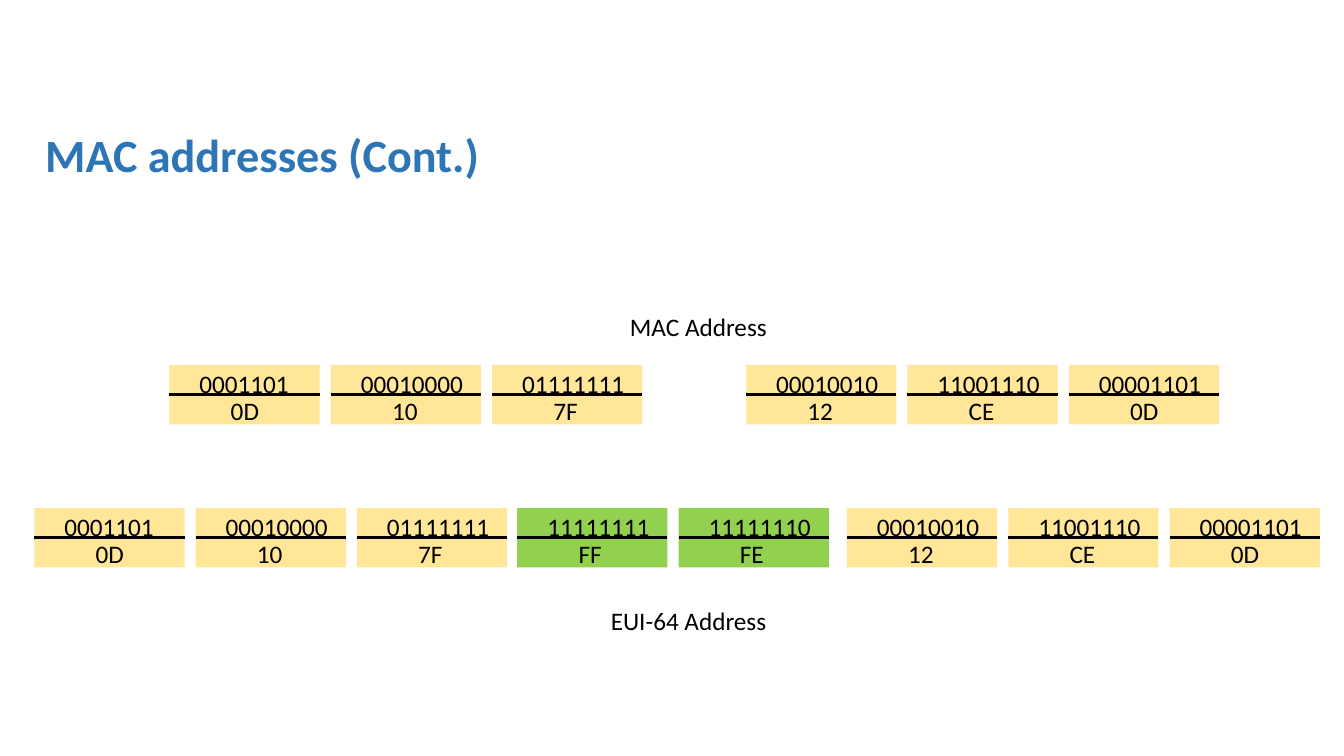
from lxml.etree import SubElement
from pptx import Presentation
from pptx.dml.color import RGBColor
from pptx.enum.shapes import MSO_CONNECTOR, MSO_SHAPE
from pptx.enum.text import MSO_ANCHOR, MSO_AUTO_SIZE
from pptx.oxml.ns import qn
from pptx.util import Pt

PX = 9144  # EMU, 100 px to the inch
THEME = {
    "font": "Calibri",
    "title": RGBColor(0x2E, 0x75, 0xB6),
    "ink": RGBColor(0, 0, 0),
    "mac": RGBColor(0xFF, 0xE6, 0x99),
    "fill": RGBColor(0x92, 0xD0, 0x50),
    "title_size": Pt(33),
    "body_size": Pt(18),
    "rule": Pt(2.25),
}
CELL_W, CELL_H, STEP = 149, 59, 160
HEX_W = {"0D": 49, "FF": 43, "FE": 44}


def add_text(shapes, text, x, y, w, h=40, color="ink", size="body_size"):
    box = shapes.add_textbox(x * PX, y * PX, w * PX, h * PX)
    frame = box.text_frame
    frame.word_wrap = False
    frame.auto_size = MSO_AUTO_SIZE.SHAPE_TO_FIT_TEXT
    run = frame.paragraphs[0].add_run()
    run.text = text
    run.font.name = THEME["font"]
    run.font.size = THEME[size]
    run.font.color.rgb = THEME[color]
    return box


def add_cell(shapes, bits, code, x, y, color):
    """Draw one byte: its bits above a rule, its hex code below."""
    rect = shapes.add_shape(MSO_SHAPE.RECTANGLE, x * PX, y * PX, CELL_W * PX, CELL_H * PX)
    rect.shadow.inherit = False
    rect.fill.solid()
    rect.fill.fore_color.rgb = THEME[color]
    rect.line.fill.background()

    rule = shapes.add_connector(MSO_CONNECTOR.STRAIGHT, 0, 0, 0, 0)
    rule.begin_connect(rect, 1)
    rule.end_connect(rect, 3)
    rule.line.color.rgb = THEME["ink"]
    rule.line.width = THEME["rule"]
    SubElement(rule._element.spPr, qn("a:effectLst"))

    add_text(shapes, bits, x + 20, y - 2, 20 + 13 * len(bits))
    add_text(shapes, code, x + 51, y + 25, HEX_W.get(code, 46))


deck = Presentation()
deck.slide_width, deck.slide_height = 1333 * PX, 750 * PX
slide = deck.slides.add_slide(deck.slide_layouts[6])

title = add_text(slide.shapes, "MAC addresses (Cont.)", 35, 107, 1268, 99, "title", "title_size")
title.text_frame.word_wrap = True
title.text_frame.auto_size = MSO_AUTO_SIZE.NONE
title.text_frame.vertical_anchor = MSO_ANCHOR.MIDDLE
title.text_frame.paragraphs[0].line_spacing = 0.9
title.text_frame.paragraphs[0].runs[0].font.bold = True

maker = [("0001101", "0D"), ("00010000", "10"), ("01111111", "7F")]
device = [("00010010", "12"), ("11001110", "CE"), ("00001101", "0D")]
filler = [("11111111", "FF"), ("11111110", "FE")]

# The MAC address keeps each byte as a group
for left, half in ((168, maker), (740, device)):
    for i, (bits, code) in enumerate(half):
        group = slide.shapes.add_group_shape()
        add_cell(group.shapes, bits, code, left + i * STEP, 362, "mac")

# The EUI-64 address has the filler between the two halves
for left, part, color in ((34, maker, "mac"), (840, device, "mac"), (513, filler, "fill")):
    for i, (bits, code) in enumerate(part):
        add_cell(slide.shapes, bits, code, left + i * STEP, 504, color)

add_text(slide.shapes, "MAC Address", 615, 304, 157)
add_text(slide.shapes, "EUI-64 Address", 596, 596, 176)

deck.save("out.pptx")
